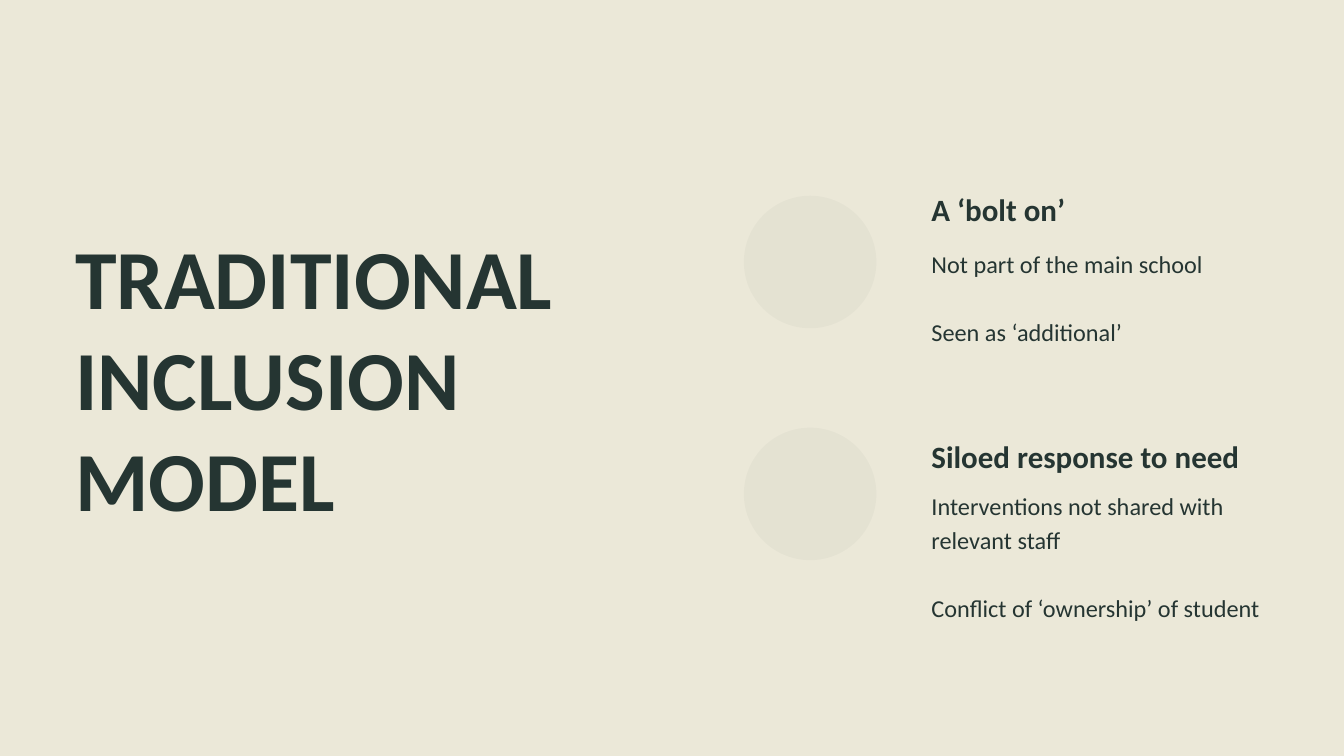
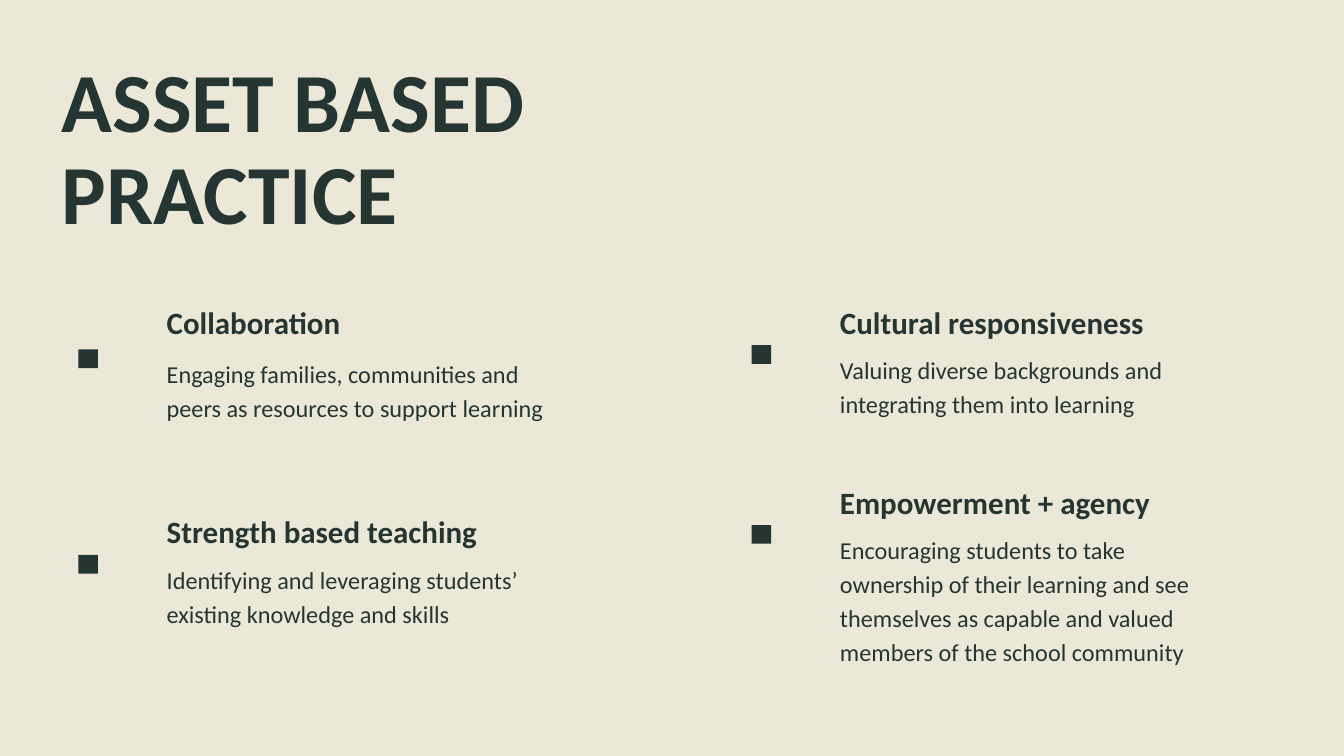
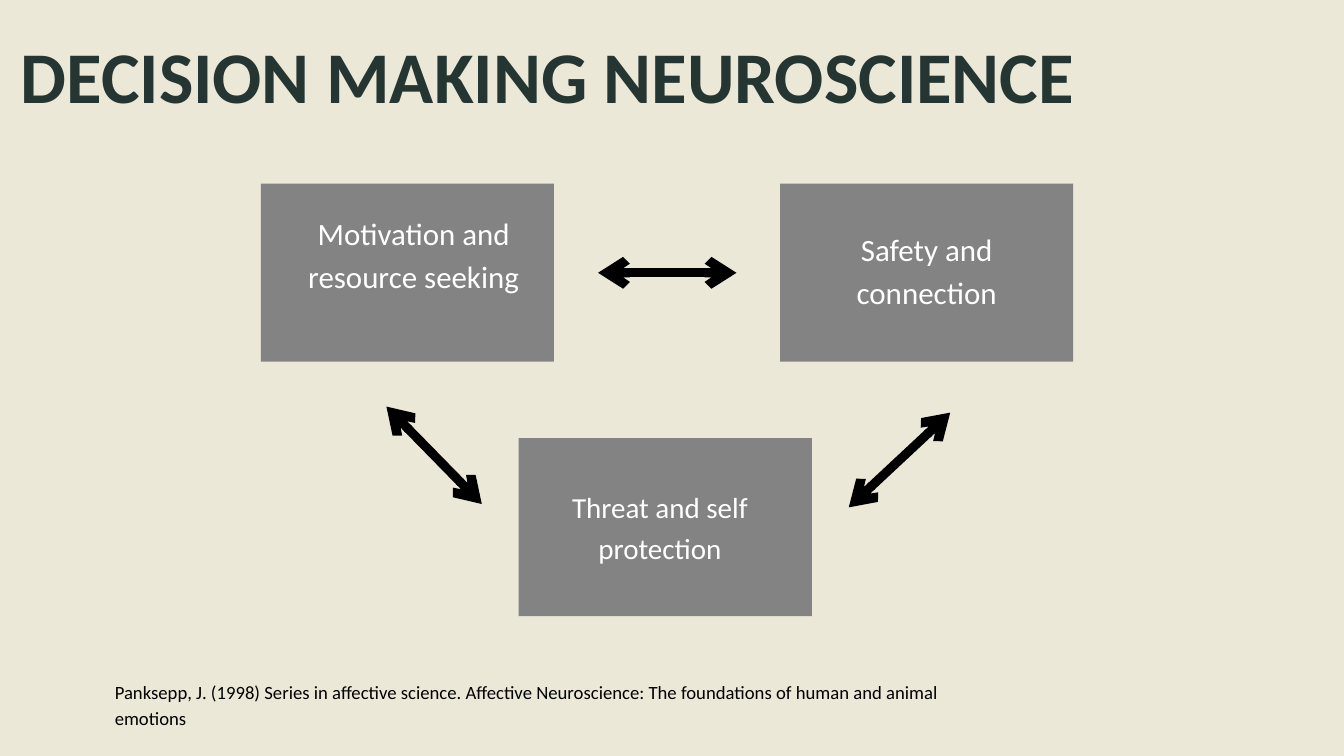
import lxml.etree
import pptx
import pptx.dml.color
import pptx.enum.shapes
import pptx.enum.text
import pptx.oxml.ns
import pptx.util
from collections import namedtuple

Pt = pptx.util.Pt
Shape = pptx.enum.shapes.MSO_SHAPE
Align = pptx.enum.text.PP_ALIGN
Box = namedtuple("Box", "left top width height")

CREAM = "EBE8D8"
GREEN = "253532"
GREY = "838383"
WHITE = "FFFFFF"
BLACK = "000000"

TITLE = {"size": 90, "color": GREEN, "bold": True, "leading": 1.1}
HEADING = {"size": 33.2, "color": GREEN, "bold": True}
BODY = {"size": 26, "color": GREEN}
LABEL = {"size": 33.2, "color": WHITE, "align": Align.CENTER}
CITATION = {"size": 20, "color": BLACK}

HEADING_HEIGHT = 45.4
TITLE_ONLY = 5


def color(value):
    return pptx.dml.color.RGBColor.from_string(value)


def in_points(box):
    return [Pt(length) for length in box]


def set_all(target, values):
    for name, value in values.items():
        setattr(target, name, value)


def add_element(parent, name, **attributes):
    lxml.etree.SubElement(parent, pptx.oxml.ns.qn(name), attributes)


def write(frame, texts, style, insets=(0, 0, 0, 0)):
    left, top, right, bottom = in_points(insets)
    set_all(frame, {
        "word_wrap": True,
        "auto_size": pptx.enum.text.MSO_AUTO_SIZE.NONE,
        "vertical_anchor": pptx.enum.text.MSO_ANCHOR.TOP,
        "margin_left": left, "margin_top": top,
        "margin_right": right, "margin_bottom": bottom,
    })
    leading = Pt(style["size"] * style.get("leading", 1.4))
    for index, text in enumerate(texts):
        para = frame.add_paragraph() if index else frame.paragraphs[0]
        set_all(para, {
            "alignment": style.get("align", Align.LEFT),
            "line_spacing": leading,
            "space_before": leading if index else Pt(0),
        })
        span = para.add_run()
        span.text = text
        set_all(span.font, {
            "name": "Calibri",
            "size": Pt(style["size"]),
            "bold": style.get("bold", False),
        })
        span.font.color.rgb = color(style["color"])


def add_text(page, box, texts, style):
    write(page.shapes.add_textbox(*in_points(box)).text_frame, texts, style)


def add_filled(page, kind, box, fill, opacity=100):
    shape = page.shapes.add_shape(kind, *in_points(box))
    shape.shadow.inherit = False
    shape.fill.solid()
    shape.fill.fore_color.rgb = color(fill)
    shape.line.fill.background()
    if opacity < 100:
        tint = shape._element.spPr.find(".//" + pptx.oxml.ns.qn("a:srgbClr"))
        add_element(tint, "a:alpha", val=str(opacity * 1000))
    return shape


def add_page(deck, title, box, **changes):
    page = deck.slides.add_slide(deck.slide_layouts[TITLE_ONLY])
    holder = page.shapes.title
    set_all(holder, dict(zip(Box._fields, in_points(box))))
    write(holder.text_frame, [title], {**TITLE, **changes})
    return page


def add_topic(page, box, heading, texts, drop, heading_width=None):
    add_text(page, Box(box.left, box.top, heading_width or box.width, HEADING_HEIGHT),
             [heading], HEADING)
    add_text(page, Box(box.left, box.top + drop, box.width, box.height - drop), texts, BODY)


def add_double_arrow(page, start, end):
    arrow = page.shapes.add_connector(pptx.enum.shapes.MSO_CONNECTOR.STRAIGHT,
                                      *in_points(start + end))
    arrow.line.color.rgb = color(BLACK)
    arrow.line.width = Pt(9.75)
    properties = arrow._element.spPr
    stroke = properties.find(pptx.oxml.ns.qn("a:ln"))
    for name in ("a:headEnd", "a:tailEnd"):
        add_element(stroke, name, type="arrow")
    add_element(properties, "a:effectLst")


def build_traditional_model(deck):
    page = add_page(deck, "TRADITIONAL INCLUSION MODEL", Box(80.6, 242, 639.4, 324.7),
                    leading=1.2)
    topics = [
        (198, 170, 209.7, 64.1, 361.4, "A ‘bolt on’",
         ["Not part of the main school", "Seen as ‘additional’"]),
        (462.2, 237, 458.2, 59, 410.4, "Siloed response to need",
         ["Interventions not shared with relevant staff",
          "Conflict of ‘ownership’ of student"]),
    ]
    for top, height, circle_top, drop, heading_width, heading, texts in topics:
        add_filled(page, Shape.OVAL, Box(797, circle_top, 142, 142), GREEN, opacity=3)
        add_topic(page, Box(998, top, 361.4, height), heading, texts, drop, heading_width)


def build_asset_based_practice(deck):
    page = add_page(deck, "ASSET BASED PRACTICE", Box(66.2, 60.5, 653.8, 201))
    left_column, right_column = 178.6, 900
    topics = [
        (left_column, 318.2, 62, "Collaboration",
         "Engaging families, communities and peers as resources to support learning"),
        (left_column, 542.9, 57.4, "Strength based teaching",
         "Identifying and leveraging students’ existing knowledge and skills"),
        (right_column, 318.2, 57.4, "Cultural responsiveness",
         "Valuing diverse backgrounds and integrating them into learning"),
        (right_column, 511, 57.4, "Empowerment + agency",
         "Encouraging students to take ownership of their learning and see themselves "
         "as capable and valued members of the school community"),
    ]
    for left, top, drop, heading, text in topics:
        height = 235 if len(text) > 100 else 164
        add_topic(page, Box(left, top, 417.6, height), heading, [text], drop)
        add_filled(page, Shape.RECTANGLE, Box(left - 94.7, top + drop - 5.8, 21, 20), GREEN)


def build_decision_making(deck):
    page = add_page(deck, "DECISION MAKING NEUROSCIENCE", Box(22.3, 41, 1396, 86.4), size=78)
    systems = [
        (279.4, 196.6, "Motivation and resource seeking", 33.1, (44.6, 26.6, 31, 0)),
        (835.9, 196.6, "Safety and connection", 33.2, (33.8, 43.2, 33.8, 0)),
        (555.8, 469.4, "Threat and self protection", 31.1, (20.9, 49, 32.4, 0)),
    ]
    for left, top, text, size, insets in systems:
        tile = add_filled(page, Shape.RECTANGLE, Box(left, top, 314, 190.8), GREY)
        write(tile.text_frame, [text], {**LABEL, "size": size}, insets)
    for start, end in [((640.8, 292.3), (789.1, 292.3)),
                       ((909.4, 543.6), (1018.1, 442.1)),
                       ((516.2, 540), (414, 435.6))]:
        add_double_arrow(page, start, end)
    add_text(page, Box(123, 725, 941, 55.4),
             ["Panksepp, J. (1998) Series in affective science. Affective Neuroscience: "
              "The foundations of human and animal emotions"], CITATION)


def main():
    deck = pptx.Presentation()
    set_all(deck, {"slide_width": Pt(1440), "slide_height": Pt(810)})
    backdrop = deck.slide_master.background.fill
    backdrop.solid()
    backdrop.fore_color.rgb = color(CREAM)
    build_traditional_model(deck)
    build_asset_based_practice(deck)
    build_decision_making(deck)
    deck.save("out.pptx")


if __name__ == "__main__":
    main()
